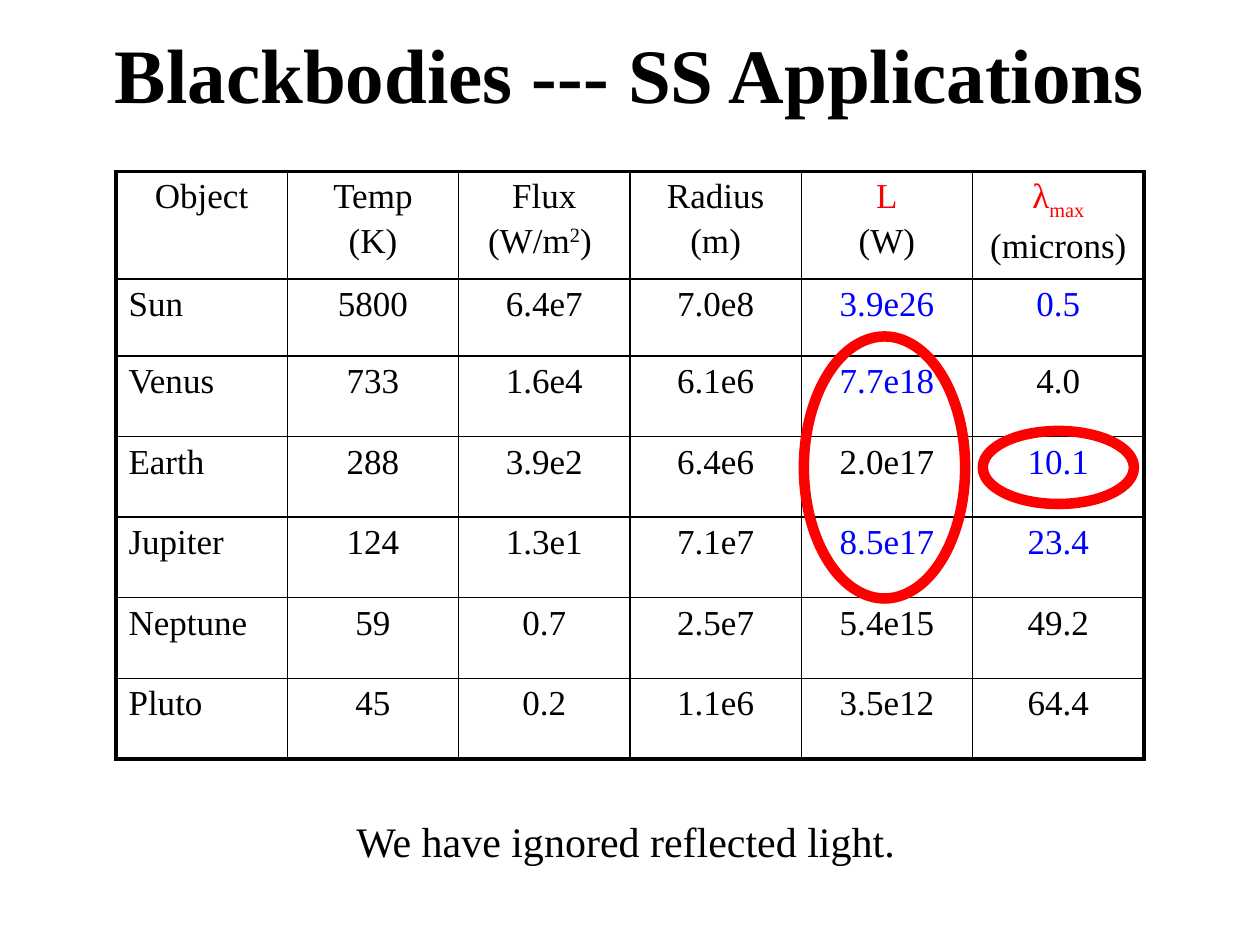
"""Build a slide that tabulates blackbody properties of solar system objects."""
import pptx
import pptx.dml.color
import pptx.enum.shapes
import pptx.enum.text
import pptx.oxml
import pptx.oxml.ns
import pptx.util

Inches = pptx.util.Inches
Pt = pptx.util.Pt
ALIGN = pptx.enum.text.PP_ALIGN
ANCHOR = pptx.enum.text.MSO_ANCHOR
BLACK, RED, BLUE = "000000", "FF0000", "0002FF"
THIN, THICK = 1, 2.25

HEADERS = [
    [[("Object",)]],
    [[("Temp",)], [("(K)",)]],
    [[("Flux",)], [("(W/m",), ("2", BLACK, 30), (") ",)]],
    [[("Radius",)], [("(m)",)]],
    [[("L", RED)], [("(W)",)]],
    [[("λ", RED), ("max", RED, -25)], [("(microns)",)]],
]
OBJECTS = [
    ["Sun", "5800", "6.4e7", "7.0e8", "3.9e26", "0.5"],
    ["Venus", "733", "1.6e4", "6.1e6", "7.7e18", "4.0"],
    ["Earth", "288", "3.9e2", "6.4e6", "2.0e17", "10.1"],
    ["Jupiter", "124", "1.3e1", "7.1e7", "8.5e17", "23.4"],
    ["Neptune", "59", "0.7", "2.5e7", "5.4e15", "49.2"],
    ["Pluto", "45", "0.2", "1.1e6", "3.5e12", "64.4"],
]
HIGHLIGHTED = {"3.9e26", "0.5", "7.7e18", "10.1", "8.5e17", "23.4"}


def color_of(value):
    """Turn a hex string into a colour."""
    return pptx.dml.color.RGBColor.from_string(value)


def add_run(paragraph, text, *, font, size, color=BLACK, bold=False, baseline=0):
    """Append formatted text to a paragraph."""
    run = paragraph.add_run()
    run.text = text
    run.font.name = font
    run.font.size = Pt(size)
    run.font.bold = bold
    run.font.color.rgb = color_of(color)
    if baseline:
        run.font._element.set("baseline", str(baseline * 1000))


def set_borders(cell, widths):
    """Draw the left, right, top and bottom borders of a cell."""
    properties = cell._tc.get_or_add_tcPr()
    for index, (side, width) in enumerate(zip("LRTB", widths)):
        border = pptx.oxml.parse_xml(
            f'<a:ln{side} {pptx.oxml.ns.nsdecls("a")} w="{Pt(width)}">'
            f'<a:solidFill><a:srgbClr val="{BLACK}"/></a:solidFill></a:ln{side}>'
        )
        properties.insert(index, border)


class SlideBuilder:
    """Hold the style and the current slide."""

    font = "Times New Roman"
    table_size = 20
    line_gap = 3

    def __init__(self, slide):
        """Keep the slide to draw on."""
        self.slide = slide

    def text(self, text, left, top, width, height, *, size, bold=False,
             align=ALIGN.LEFT, anchor=ANCHOR.TOP, wrap=True):
        """Add a text box with one paragraph."""
        box = self.slide.shapes.add_textbox(
            Inches(left), Inches(top), Inches(width), Inches(height))
        frame = box.text_frame
        frame.word_wrap = wrap
        frame.vertical_anchor = anchor
        paragraph = frame.paragraphs[0]
        paragraph.alignment = align
        add_run(paragraph, text, font=self.font, size=size, bold=bold)

    def cell(self, cell, lines, align):
        """Fill a table cell with lines of (text, colour, baseline) pieces."""
        cell.fill.background()
        frame = cell.text_frame
        for index, pieces in enumerate(lines):
            paragraph = frame.add_paragraph() if index else frame.paragraphs[0]
            paragraph.alignment = align
            paragraph.space_before = Pt(self.line_gap if index else 0)
            for text, color, baseline in (
                    (*piece, BLACK, 0)[:3] if len(piece) == 1 else (*piece, 0)[:3]
                    for piece in pieces):
                add_run(paragraph, text, font=self.font, size=self.table_size,
                        color=color, baseline=baseline)

    def table(self, rows, left, top, column_width, row_heights):
        """Add a ruled table with a thick outer frame."""
        row_count, column_count = len(rows), len(rows[0])
        table = self.slide.shapes.add_table(
            row_count, column_count, Inches(left), Inches(top),
            Inches(column_width * column_count), Inches(sum(row_heights))).table
        table.first_row = table.horz_banding = False
        for column in table.columns:
            column.width = Inches(column_width)
        for row, height in zip(table.rows, row_heights):
            row.height = Inches(height)
        for row_index, row in enumerate(rows):
            for column_index, lines in enumerate(row):
                cell = table.cell(row_index, column_index)
                is_name = row_index > 0 and column_index == 0
                self.cell(cell, lines, ALIGN.LEFT if is_name else ALIGN.CENTER)
                outer = (column_index == 0, column_index == column_count - 1,
                         row_index == 0, row_index == row_count - 1)
                set_borders(cell, [THICK if edge else THIN for edge in outer])

    def ring(self, left, top, width, height):
        """Add an unfilled red ellipse."""
        shape = self.slide.shapes.add_shape(
            pptx.enum.shapes.MSO_SHAPE.OVAL,
            Inches(left), Inches(top), Inches(width), Inches(height))
        shape.shadow.inherit = False
        shape.fill.background()
        shape.line.color.rgb = color_of(RED)
        shape.line.width = Pt(6)


def main():
    """Build and save the presentation."""
    presentation = pptx.Presentation()
    presentation.slide_width = Inches(10)
    presentation.slide_height = Inches(7.5)
    builder = SlideBuilder(presentation.slides.add_slide(presentation.slide_layouts[6]))

    builder.text("Blackbodies --- SS Applications", 0.75, 0.08, 8.5, 1, size=44,
                 bold=True, align=ALIGN.CENTER, anchor=ANCHOR.MIDDLE)
    values = [[[[(text, BLUE if text in HIGHLIGHTED else BLACK)]] for text in row]
              for row in OBJECTS]
    builder.table([HEADERS, *values], 0.92, 1.36, 1.36, [0.83, 0.61] + [0.64] * 5)
    builder.text("We have ignored reflected light.", 2.73, 6.42, 4.6, 0.51,
                 size=24, wrap=False)
    builder.ring(6.38, 2.67, 1.28, 2.08)
    builder.ring(7.8, 3.42, 1.2, 0.58)
    presentation.save("out.pptx")


if __name__ == "__main__":
    main()
